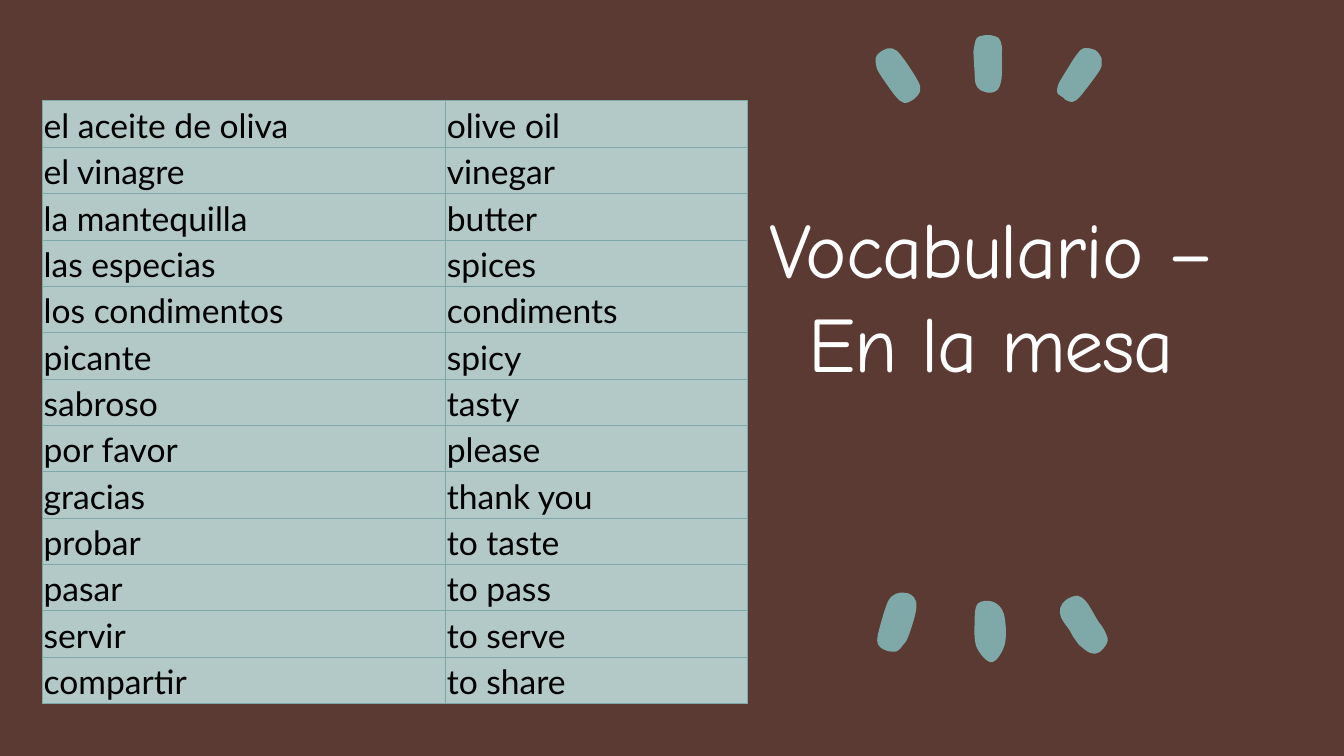
from lxml.etree import SubElement
from pptx import Presentation
from pptx.dml.color import RGBColor
from pptx.enum.shapes import MSO_SHAPE
from pptx.enum.text import MSO_ANCHOR, MSO_AUTO_SIZE, PP_ALIGN
from pptx.oxml.ns import qn
from pptx.util import Cm, Pt

BROWN = RGBColor(0x5B, 0x3A, 0x33)
DARK = RGBColor(0x41, 0x29, 0x24)
TEAL = RGBColor(0x7F, 0xA9, 0xA8)
PALE = RGBColor(0xB2, 0xC9, 0xC7)
WHITE = RGBColor(0xFF, 0xFF, 0xFF)
BLACK = RGBColor(0, 0, 0)

WORDS = [
    ("el aceite de oliva", "olive oil"),
    ("el vinagre", "vinegar"),
    ("la mantequilla", "butter"),
    ("las especias", "spices"),
    ("los condimentos", "condiments"),
    ("picante", "spicy"),
    ("sabroso", "tasty"),
    ("por favor", "please"),
    ("gracias", "thank you"),
    ("probar", "to taste"),
    ("pasar", "to pass"),
    ("servir", "to serve"),
    ("compartir", "to share"),
]

UNIT = Cm(2.54) / 100
UPPER = [
    [(994, 46), (994, 58), (994, 74), (993, 82), (990, 89), (984, 92), (980, 92),
     (972, 89), (968, 83), (967, 72), (966, 55), (966, 50), (969, 38), (977, 35),
     (983, 35), (991, 38)],
    [(889, 96), (878, 81), (872, 72), (870, 68), (869, 57), (876, 50), (885, 48),
     (894, 55), (910, 79), (913, 90), (906, 99), (897, 102)],
    [(1067, 100), (1062, 101), (1057, 99), (1055, 97), (1049, 92), (1050, 84),
     (1055, 75), (1060, 67), (1067, 56), (1075, 48), (1087, 50), (1093, 58),
     (1093, 62), (1091, 70), (1074, 93)],
]
LOWER = [
    [(1077, 596), (1083, 605), (1090, 617), (1095, 624), (1099, 636), (1091, 647),
     (1082, 648), (1072, 641), (1070, 639), (1065, 632), (1061, 625), (1053, 613),
     (1052, 603), (1058, 595), (1069, 591)],
    [(996, 609), (997, 639), (984, 657), (969, 642), (967, 617), (970, 599),
     (985, 597)],
    [(871, 630), (871, 639), (876, 644), (881, 646), (890, 646), (896, 640),
     (901, 632), (908, 610), (909, 597), (904, 590), (897, 588), (889, 589),
     (882, 595), (877, 608)],
]


def paint(shape, color):
    """Fill a shape with a flat colour."""
    shape.shadow.inherit = False
    shape.fill.solid()
    shape.fill.fore_color.rgb = color
    shape.line.fill.background()


def smooth(shape):
    """Turn the straight closed outline of a shape into Bézier curves."""
    trace = next(shape.element.iter(qn("a:path")))
    knots = [(int(p.get("x")), int(p.get("y"))) for p in trace.iter(qn("a:pt"))]
    for step in list(trace)[1:]:
        trace.remove(step)
    for i in range(len(knots)):
        a, b, c, d = [knots[(i + k) % len(knots)] for k in (-1, 0, 1, 2)]
        curve = SubElement(trace, qn("a:cubicBezTo"))
        out = [q + (r - p) / 6 for p, q, r in zip(a, b, c)]
        into = [r - (s - q) / 6 for q, r, s in zip(b, c, d)]
        for x, y in (out, into, c):
            SubElement(curve, qn("a:pt"), x=str(round(x)), y=str(round(y)))
    SubElement(trace, qn("a:close"))


def add_rays(slide, rays):
    """Draw a group of brush dabs."""
    group = slide.shapes.add_group_shape()
    for knots in rays:
        pen = group.shapes.build_freeform(*knots[0], scale=UNIT)
        pen.add_line_segments(knots[1:], close=True)
        ray = pen.convert_to_shape()
        paint(ray, TEAL)
        trace = next(ray.element.iter(qn("a:path")))
        for mark in [trace, *trace.iter(qn("a:pt"))]:
            for name in mark.keys():
                mark.set(name, str(int(mark.get(name)) * 100))
        smooth(ray)


def style(run, font, size, color):
    """Set the font of a run."""
    run.font.name = font
    run.font.size = Pt(size)
    run.font.color.rgb = color


def set_title(slide):
    """Place and format the title."""
    title = slide.shapes.title
    title.left, title.top = Cm(18.01), Cm(4.32)
    title.width, title.height = Cm(13.94), Cm(5.46)
    frame = title.text_frame
    frame.text = "Vocabulario – En la mesa"
    frame.word_wrap = True
    frame.auto_size = MSO_AUTO_SIZE.NONE
    frame.vertical_anchor = MSO_ANCHOR.BOTTOM
    frame.margin_left = frame.margin_right = Cm(0)
    frame.margin_top = frame.margin_bottom = Cm(0)
    frame.paragraphs[0].alignment = PP_ALIGN.CENTER
    run = frame.paragraphs[0].runs[0]
    style(run, "Comic Neue", 56, WHITE)
    run.font._element.set("spc", "-100")


def add_back(slide):
    """Cover the slide with a brown panel behind the title."""
    slide.background.fill.solid()
    slide.background.fill.fore_color.rgb = DARK
    panel = slide.shapes.add_shape(MSO_SHAPE.RECTANGLE, 0, 0, Cm(33.87), Cm(19.05))
    paint(panel, BROWN)
    slide.shapes.title.element.addprevious(panel.element)


def fill_cell(cell, text):
    """Write a word in a table cell with fill and borders."""
    cell.text = text
    cell.margin_left = cell.margin_right = Cm(0.04)
    cell.margin_top = cell.margin_bottom = Cm(0.04)
    line = cell.text_frame.paragraphs[0]
    line.line_spacing = 1.07
    style(line.runs[0], "Lato", 24, BLACK)
    props = cell._tc.get_or_add_tcPr()
    for side in ("a:lnL", "a:lnR", "a:lnT", "a:lnB"):
        edge = SubElement(props, qn(side), w=str(Pt(0.5)))
        solid = SubElement(edge, qn("a:solidFill"))
        SubElement(solid, qn("a:srgbClr"), val=str(TEAL))
    cell.fill.solid()
    cell.fill.fore_color.rgb = PALE


def add_words(slide):
    """Build the vocabulary table."""
    high = Cm(14.5)
    frame = slide.shapes.add_table(
        len(WORDS), 2, Cm(1.06), Cm(2.54), Cm(17.78), high)
    table = frame.table
    table.first_row = table.horz_banding = False
    for col, width in zip(table.columns, (10.16, 7.62)):
        col.width = Cm(width)
    for r, pair in enumerate(WORDS):
        table.rows[r].height = Cm(1.07)
        for c, word in enumerate(pair):
            fill_cell(table.cell(r, c), word)
    frame.height = high


def main():
    """Build the slide and save it."""
    deck = Presentation()
    deck.slide_width, deck.slide_height = Cm(33.87), Cm(19.05)
    slide = deck.slides.add_slide(deck.slide_layouts[5])
    set_title(slide)
    add_back(slide)
    add_rays(slide, UPPER)
    add_rays(slide, LOWER)
    add_words(slide)
    deck.save("out.pptx")


if __name__ == "__main__":
    main()
